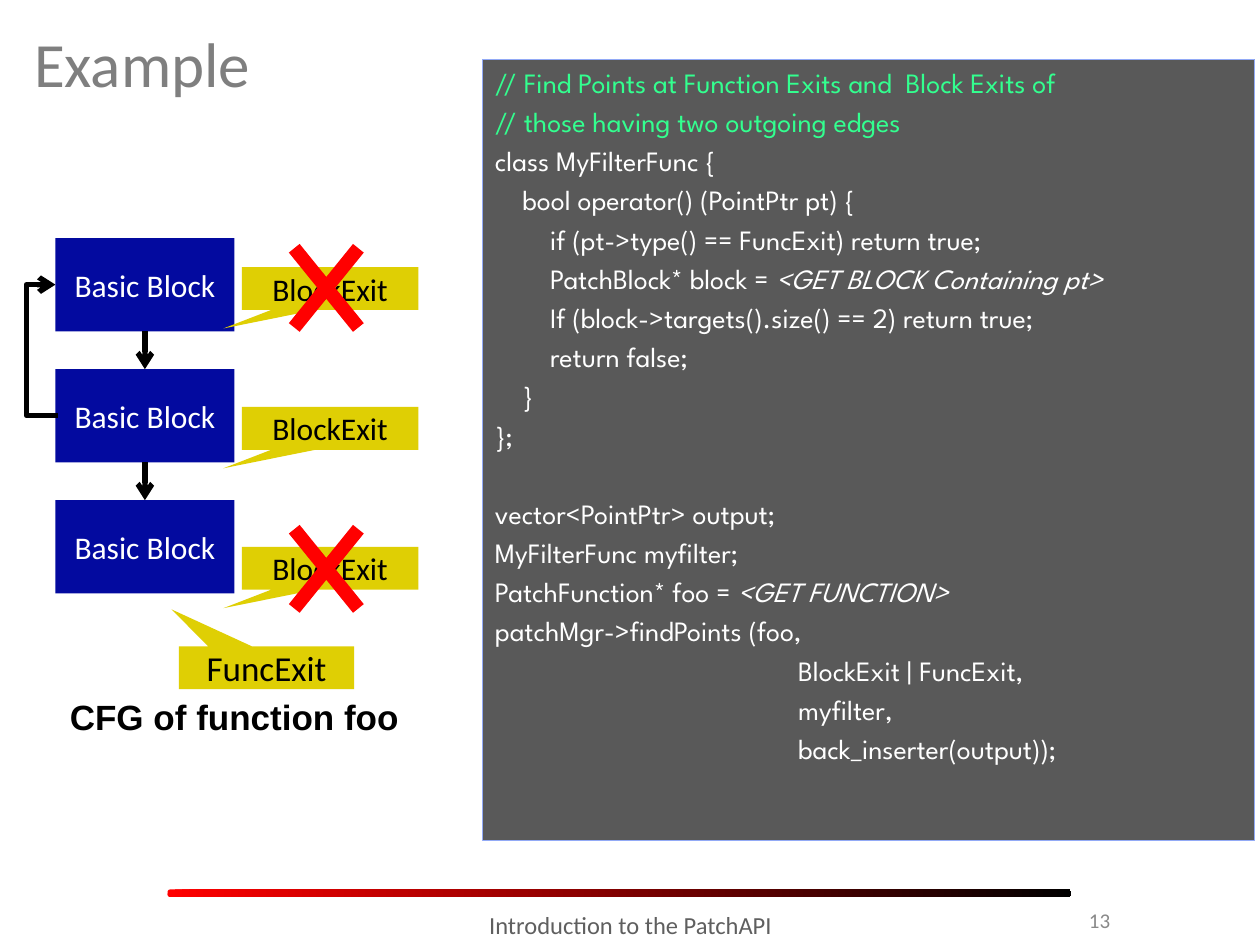
import dataclasses
import typing

import pptx
import pptx.dml.color
import pptx.enum.shapes
import pptx.enum.text
import pptx.oxml
import pptx.oxml.ns
import pptx.util
from lxml import etree

PX = 9144  # EMU in one px, 100 px to the inch
HUES = {
    "red": "FF0000", "black": "000000", "white": "FFFFFF", "title": "7F7F7F",
    "page": "898989", "foot": "5F5F5F", "panel": "595959", "edge": "92AAF6",
    "note": "33FF8F", "block": "030A9F", "tag": "DFCF04",
}
KIND = pptx.enum.shapes.MSO_SHAPE
LINK = pptx.enum.shapes.MSO_CONNECTOR
ALIGN = pptx.enum.text.PP_ALIGN
MID = pptx.enum.text.MSO_ANCHOR.MIDDLE
TOP = pptx.enum.text.MSO_ANCHOR.TOP


class Box(typing.NamedTuple):
    x: int
    y: int
    w: int
    h: int

    def emu(self) -> list[int]:
        return [n * PX for n in self]


@dataclasses.dataclass
class Style:
    size: int
    hue: str
    face: str = "Calibri"
    bold: bool = False
    align: typing.Any = ALIGN.CENTER
    anchor: typing.Any = MID


@dataclasses.dataclass
class Tag:
    box: Box
    text: str
    size: int
    tip: tuple[float, float]


CODE = """\
// Find Points at Function Exits and  Block Exits of
// those having two outgoing edges
class MyFilterFunc {
    bool operator() (PointPtr pt) {
        if (pt->type() == FuncExit) return true;
        PatchBlock* block = |<GET BLOCK Containing pt>
        If (block->targets().size() == 2) return true;
        return false;
    }
};
vector<PointPtr> output;
MyFilterFunc myfilter;
PatchFunction* foo = |<GET FUNCTION>
patchMgr->findPoints (foo,
                                            BlockExit | FuncExit,
                                            myfilter,
                                            back_inserter(output));"""
GAP = "vector"  # the line that opens the second part of the code

BLOCKS = [Box(44, 189 + 104 * i, 142, 74) for i in range(3)]
TAGS = [Tag(Box(192, 212 + 111 * i, 140, 34), "BlockExit", 18, (-0.605, 0.932))
        for i in range(3)]
TAGS.append(Tag(Box(142, 513, 139, 34), "FuncExit", 20, (-0.542, -1.362)))
CROSSES = [Box(210, y, 98, 121) for y in (168, 391)]


def rgb(hue: str) -> pptx.dml.color.RGBColor:
    return pptx.dml.color.RGBColor.from_string(HUES[hue])


def dress(par, style: Style) -> None:
    par.alignment = style.align
    font = par.font
    font.name, font.size = style.face, pptx.util.Pt(style.size)
    font.bold, font.color.rgb = style.bold, rgb(style.hue)


def write(shape, text: str, style: Style) -> None:
    frame = shape.text_frame
    frame.word_wrap = True
    frame.vertical_anchor = style.anchor
    frame.text = text
    dress(frame.paragraphs[0], style)


def label(slide, box: Box, text: str, style: Style) -> None:
    write(slide.shapes.add_textbox(*box.emu()), text, style)


def shape(slide, kind, box: Box, hue: str, *adjust: float):
    item = slide.shapes.add_shape(kind, *box.emu())
    item.shadow.inherit = False
    item.fill.solid()
    item.fill.fore_color.rgb = rgb(hue)
    item.line.fill.background()
    for i, value in enumerate(adjust):
        item.adjustments[i] = value
    return item


def arrow(slide, kind, start: tuple[int, int], end: tuple[int, int]):
    item = slide.shapes.add_connector(kind, *[n * PX for n in start + end])
    item.line.width = pptx.util.Pt(3)
    item.line.color.rgb = rgb("black")
    tip = etree.SubElement(item.line._get_or_add_ln(),
                           pptx.oxml.ns.qn("a:tailEnd"))
    tip.set("type", "arrow")
    etree.SubElement(item._element.spPr, pptx.oxml.ns.qn("a:effectLst"))
    return item


def bend(link, ratio: float) -> None:
    """Place the elbow's middle leg, as a share of the link's width."""
    geom = link._element.spPr.find(pptx.oxml.ns.qn("a:prstGeom"))
    guides = geom.find(pptx.oxml.ns.qn("a:avLst"))
    if guides is None:
        guides = etree.SubElement(geom, pptx.oxml.ns.qn("a:avLst"))
    guide = etree.SubElement(guides, pptx.oxml.ns.qn("a:gd"))
    guide.set("name", "adj1")
    guide.set("fmla", f"val {round(ratio * 100000)}")


def space(par, share: float) -> None:
    """Set the space before as a share of the line."""
    before = etree.SubElement(par._p.get_or_add_pPr(),
                              pptx.oxml.ns.qn("a:spcBef"))
    size = etree.SubElement(before, pptx.oxml.ns.qn("a:spcPct"))
    size.set("val", str(round(share * 100000)))


def listing(slide) -> None:
    panel = shape(slide, KIND.RECTANGLE, Box(383, 47, 613, 620), "panel")
    panel.line.color.rgb = rgb("edge")
    panel.line.width = pptx.util.Pt(0.75)
    frame = panel.text_frame
    frame.word_wrap = True
    frame.vertical_anchor = TOP
    for i, line in enumerate(CODE.split("\n")):
        par = frame.add_paragraph() if i else frame.paragraphs[0]
        if line.startswith(GAP):
            par.space_before = pptx.util.Pt(25.5)
        elif i:
            space(par, 0.2)
        hue = "note" if line.startswith("//") else "white"
        dress(par, Style(16, hue, "League Spartan", align=ALIGN.LEFT))
        plain, mark, slot = line.partition("|<")
        par.add_run().text = plain
        if mark:
            run = par.add_run()
            run.text = "<" + slot
            run.font.italic = True


def graph(slide) -> None:
    for box in BLOCKS:
        write(shape(slide, KIND.RECTANGLE, box, "block"), "Basic Block",
              Style(18, "white"))
    for up, down in zip(BLOCKS, BLOCKS[1:]):
        mid = up.x + up.w // 2
        arrow(slide, LINK.STRAIGHT, (mid, up.y + up.h), (mid, down.y))
    bend(arrow(slide, LINK.ELBOW, (46, 330), (44, 226)), 12.5)
    label(slide, Box(40, 547, 292, 44), "CFG of function foo",
          Style(20, "black", "Arial", bold=True, anchor=TOP))
    for tag in TAGS:
        write(shape(slide, KIND.RECTANGULAR_CALLOUT, tag.box, "tag", *tag.tip),
              tag.text, Style(tag.size, "black"))
    for box in CROSSES:
        shape(slide, KIND.MATH_MULTIPLY, box, "red", 0.112)


def footer(slide) -> None:
    rule = shape(slide, KIND.ROUNDED_RECTANGLE, Box(133, 706, 717, 6),
                 "red", 0.333)
    rule.fill.gradient()
    rule.fill.gradient_angle = 0
    for stop, hue in zip(rule.fill.gradient_stops, ("red", "black")):
        stop.color.rgb = rgb(hue)
    label(slide, Box(758, 710, 133, 40), "13",
          Style(12, "page", align=ALIGN.RIGHT))
    label(slide, Box(242, 717, 517, 40), "Introduction to the PatchAPI",
          Style(14, "foot", anchor=TOP))


def main() -> None:
    deck = pptx.Presentation()
    deck.slide_width, deck.slide_height = 1000 * PX, 750 * PX
    slide = deck.slides.add_slide(deck.slide_layouts[5])
    title = slide.shapes.title
    title.left, title.top, title.width, title.height = Box(17, 8, 967, 83).emu()
    write(title, "Example", Style(36, "title", align=ALIGN.LEFT))
    footer(slide)
    listing(slide)
    graph(slide)
    deck.save("out.pptx")


if __name__ == "__main__":
    main()
